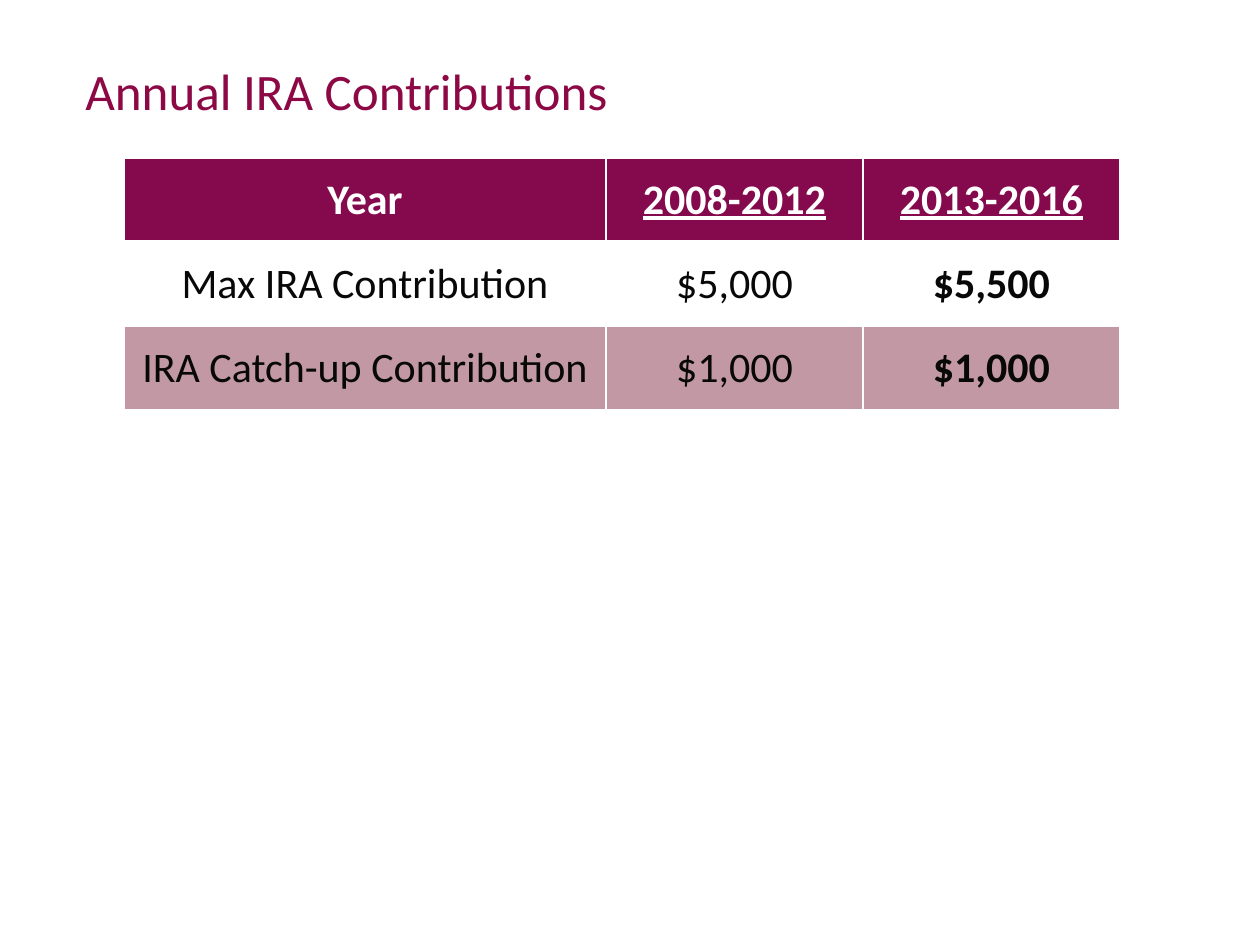
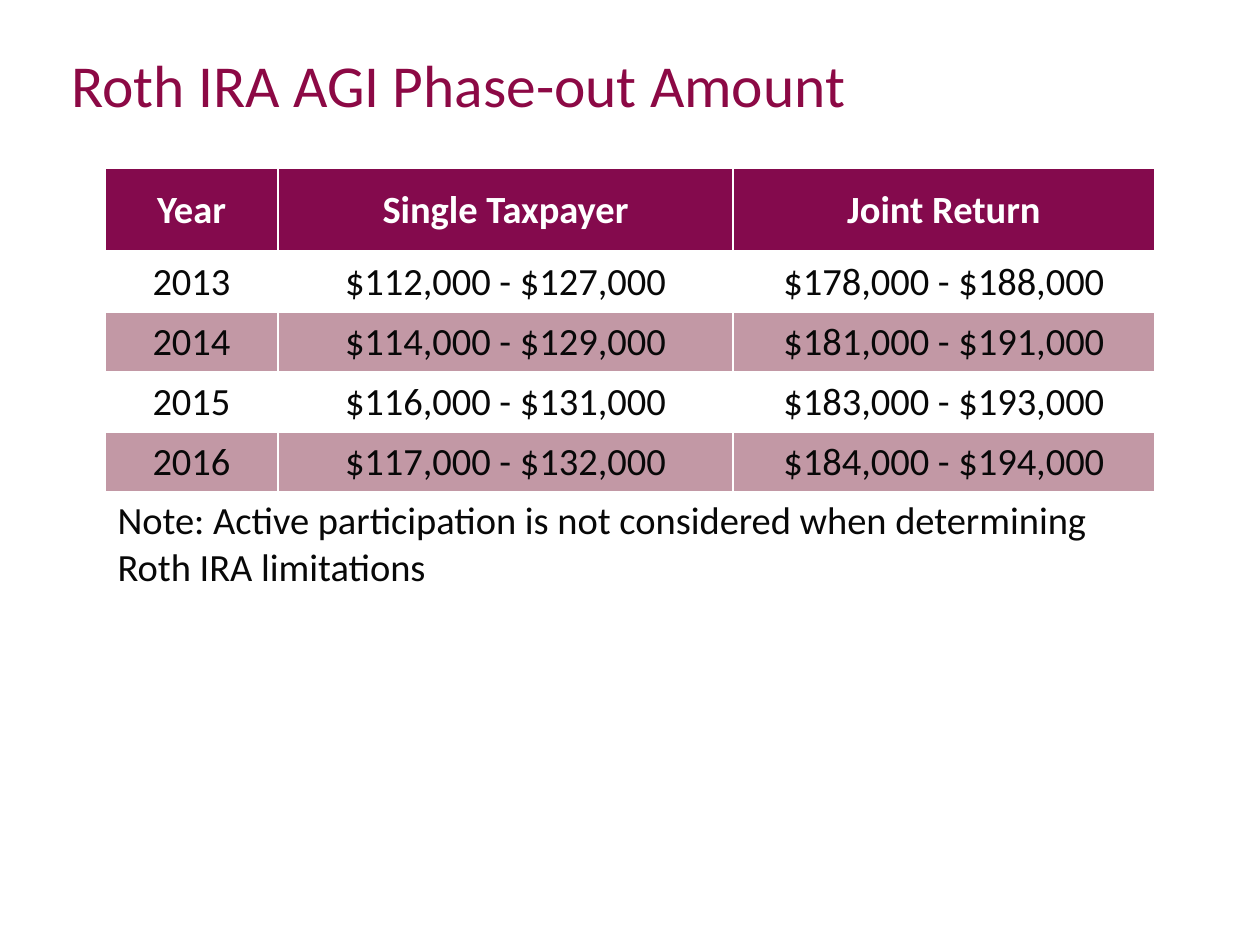
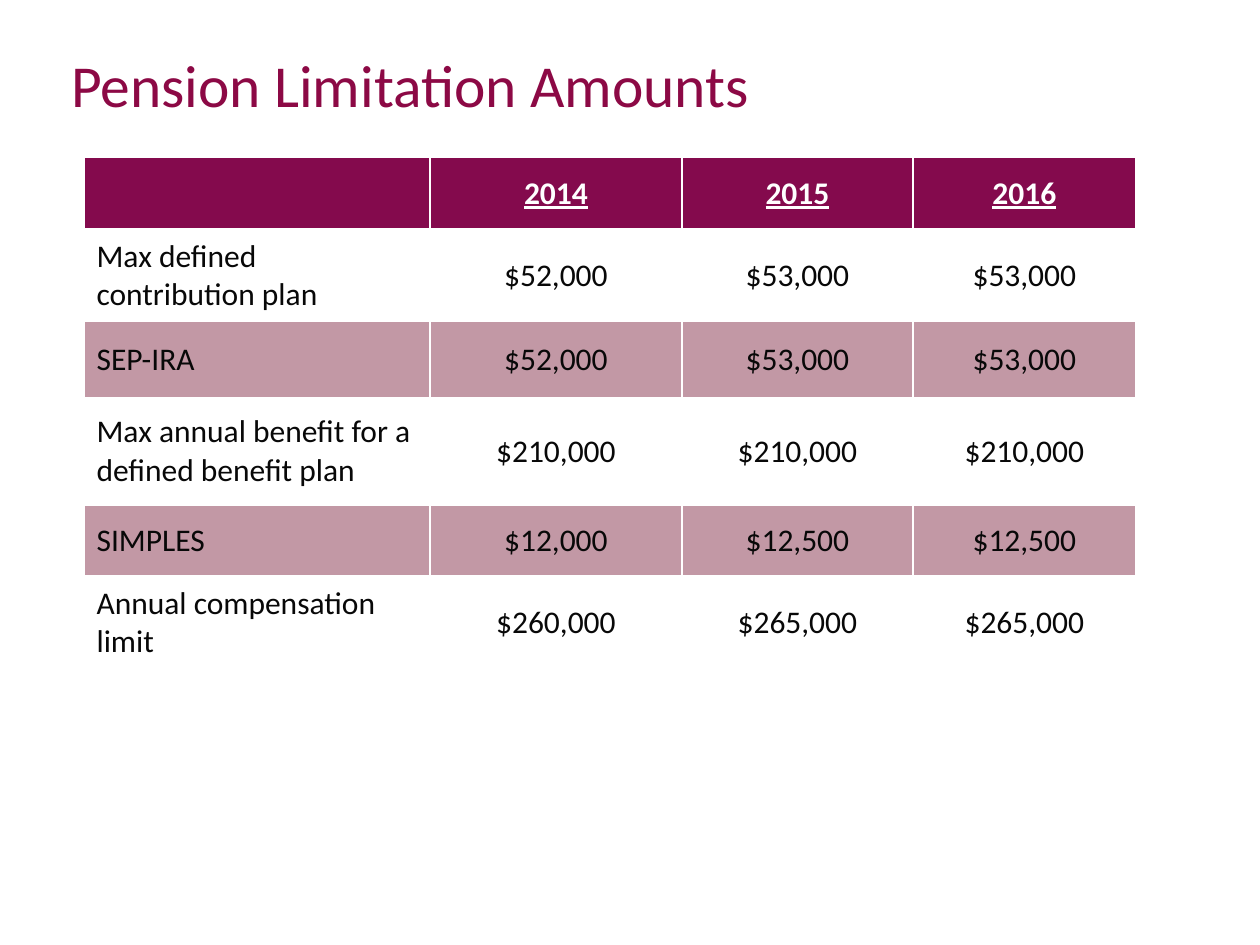
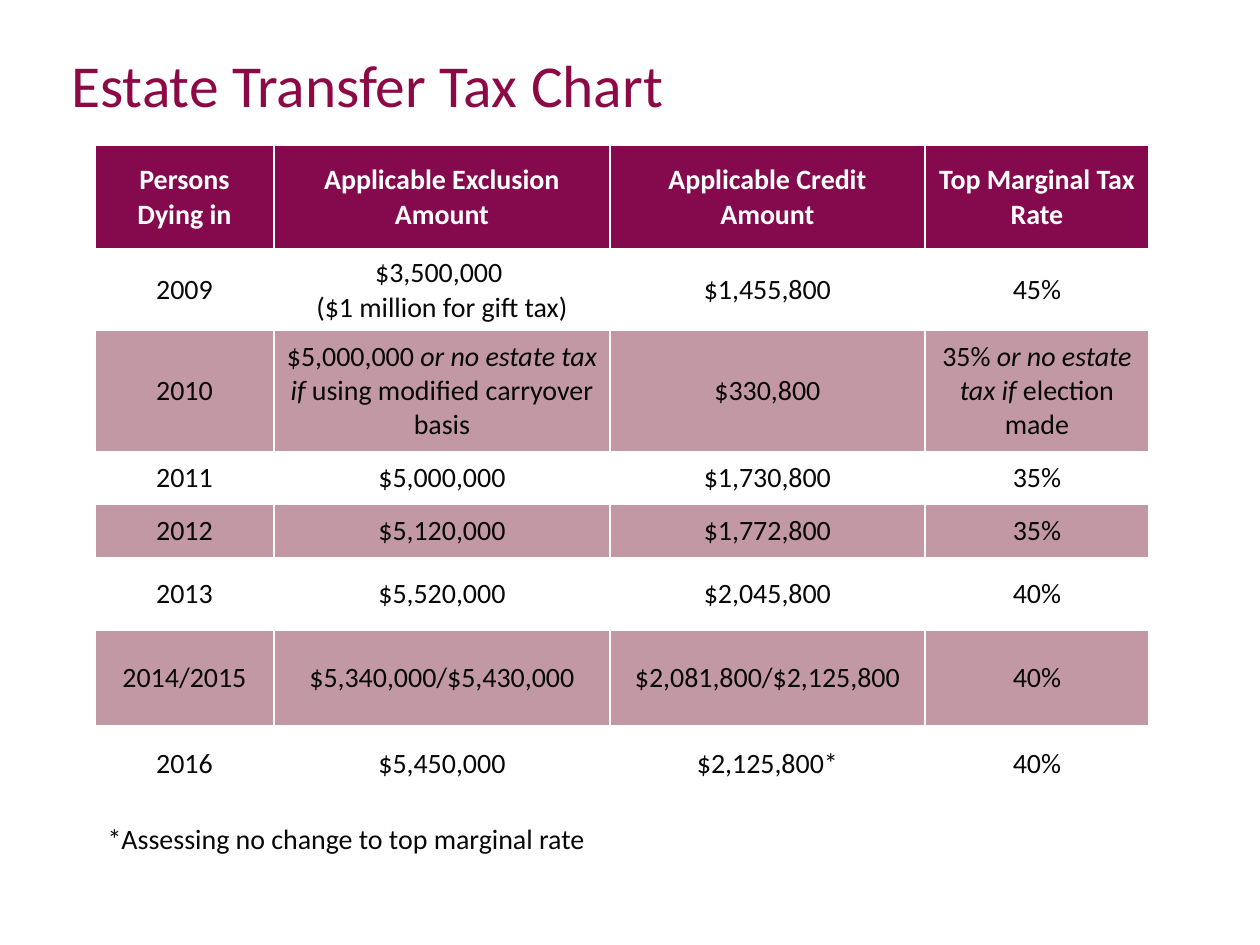
"""Builds four slides of retirement and estate tax tables."""
import pptx
import pptx.dml.color
import pptx.enum.text
import pptx.oxml
import pptx.oxml.ns
import pptx.util

ALIGN = pptx.enum.text.PP_ALIGN


class Deck:
    """Holds the shared style and the current slide."""

    hues = {"title": "8C0945", "head": "840A4D", "band": "C298A5",
            "plain": "FFFFFF", "ink": "080808"}
    face = "Calibri"
    scale = 914400 / 126

    def __init__(self):
        """Start an empty deck of 10 by 7.5 inches."""
        self.show = pptx.Presentation()
        self.show.slide_width = self.emu(1260)
        self.show.slide_height = self.emu(945)

    def emu(self, px):
        """Turn px into EMU."""
        return pptx.util.Emu(round(px * self.scale))

    def color(self, name):
        """Look up a named colour."""
        return pptx.dml.color.RGBColor.from_string(self.hues[name])

    def style(self, para, size, hue, bold=False, under=False):
        """Set the font of a paragraph."""
        font = para.font
        font.name, font.size = self.face, pptx.util.Pt(size)
        font.bold, font.underline = bold, under
        font.color.rgb = self.color(hue)

    def title(self, text, left=59, top=42, width=1076, height=94, size=34):
        """Add a slide with its title."""
        self.slide = self.show.slides.add_slide(self.show.slide_layouts[6])
        box = self.slide.shapes.add_textbox(*map(self.emu, (left, top, width, height)))
        box.text_frame.word_wrap = True
        para = box.text_frame.paragraphs[0]
        para.text = text
        self.style(para, size, "title")

    def edge(self, cell, head):
        """Draw the white borders of a cell."""
        props = cell._tc.get_or_add_tcPr()
        for side in "LRTB":
            width = pptx.util.Pt(3 if head and side == "B" else 1)
            props.append(pptx.oxml.parse_xml(
                f'<a:ln{side} {pptx.oxml.ns.nsdecls("a")} w="{width}"><a:solidFill>'
                f'<a:srgbClr val="{self.hues["plain"]}"/></a:solidFill></a:ln{side}>'))

    def cell(self, cell, text, size, fill, align, **look):
        """Fill one cell; parts between underscores are italic."""
        self.edge(cell, fill == "head")
        cell.fill.solid()
        cell.fill.fore_color.rgb = self.color(fill)
        cell.vertical_anchor = pptx.enum.text.MSO_ANCHOR.MIDDLE
        para = cell.text_frame.paragraphs[0]
        para.alignment = align
        first, *rest = text.split("_")
        para.text = first
        for spot, part in enumerate(rest):
            run = para.add_run()
            run.text = part
            run.font.italic = spot % 2 == 0
        self.style(para, size, "plain" if fill == "head" else "ink", **look)

    def table(self, left, top, cols, rows, size, data, under=False, strong=None, label=False):
        """Add a banded table; a row of one text spans all columns."""
        frame = self.slide.shapes.add_table(
            len(rows), len(cols), *map(self.emu, (left, top, sum(cols), sum(rows))))
        grid = frame.table
        props = grid._tbl.tblPr
        props.remove(props.find(pptx.oxml.ns.qn("a:tableStyleId")))
        grid.horz_banding = False
        for col, width in zip(grid.columns, cols):
            col.width = self.emu(width)
        for y, texts in enumerate(data):
            grid.rows[y].height = self.emu(rows[y])
            fill = "head" if y == 0 else "plain" if y % 2 else "band"
            note = len(texts) == 1
            if note:
                grid.cell(y, 0).merge(grid.cell(y, len(cols) - 1))
                fill = "plain"
            for x, text in enumerate(texts):
                start = note or (label and x == 0)
                self.cell(grid.cell(y, x), text, size, fill,
                          ALIGN.LEFT if start else ALIGN.CENTER,
                          bold=y == 0 or x == strong,
                          under=under and y == 0 and x > 0)


def main():
    """Build and save the slides."""
    deck = Deck()

    deck.title("Annual IRA Contributions", 73, 53, 1092, 158, 29.2)
    deck.table(124, 158, [482, 257, 257], [84] * 3, 24, [
        ["Year", "2008-2012", "2013-2016"],
        ["Max IRA Contribution", "$5,000", "$5,500"],
        ["IRA Catch-up Contribution", "$1,000", "$1,000"],
    ], under=True, strong=2)

    deck.title("Roth IRA AGI Phase-out Amount")
    deck.table(105, 168, [173, 455, 422], [84, *[60] * 4, 91], 22, [
        ["Year", "Single Taxpayer", "Joint Return"],
        ["2013", "$112,000 - $127,000", "$178,000 - $188,000"],
        ["2014", "$114,000 - $129,000", "$181,000 - $191,000"],
        ["2015", "$116,000 - $131,000", "$183,000 - $193,000"],
        ["2016", "$117,000 - $132,000", "$184,000 - $194,000"],
        ["Note: Active participation is not considered when determining Roth IRA limitations"],
    ])

    deck.title("Pension Limitation Amounts")
    deck.table(84, 157, [346, 252, 231, 223], [73, 91, 77, 107, 71, 94], 18, [
        ["", "2014", "2015", "2016"],
        ["Max defined contribution plan", "$52,000", "$53,000", "$53,000"],
        ["SEP-IRA", "$52,000", "$53,000", "$53,000"],
        ["Max annual benefit for a defined benefit plan", "$210,000", "$210,000", "$210,000"],
        ["SIMPLES", "$12,000", "$12,500", "$12,500"],
        ["Annual compensation limit", "$260,000", "$265,000", "$265,000"],
    ], under=True, label=True)

    deck.title("Estate Transfer Tax Chart", width=1125)
    deck.table(95, 145, [179, 336, 315, 224], [105, 63, 122, 53, 53, 73, 95, 76, 76], 16, [
        ["Persons Dying in", "Applicable Exclusion Amount", "Applicable Credit Amount",
         "Top Marginal Tax Rate"],
        ["2009", "$3,500,000 \n($1 million for gift tax)", "$1,455,800", "45%"],
        ["2010", "$5,000,000 _or no estate tax if_ using modified carryover basis",
         "$330,800", "35% _or no estate tax if_ election made"],
        ["2011", "$5,000,000", "$1,730,800", "35%"],
        ["2012", "$5,120,000", "$1,772,800", "35%"],
        ["2013", "$5,520,000", "$2,045,800", "40%"],
        ["2014/2015", "$5,340,000/$5,430,000", "$2,081,800/$2,125,800", "40%"],
        ["2016", "$5,450,000", "$2,125,800*", "40%"],
        ["*Assessing no change to top marginal rate"],
    ])

    deck.show.save("out.pptx")


if __name__ == "__main__":
    main()
